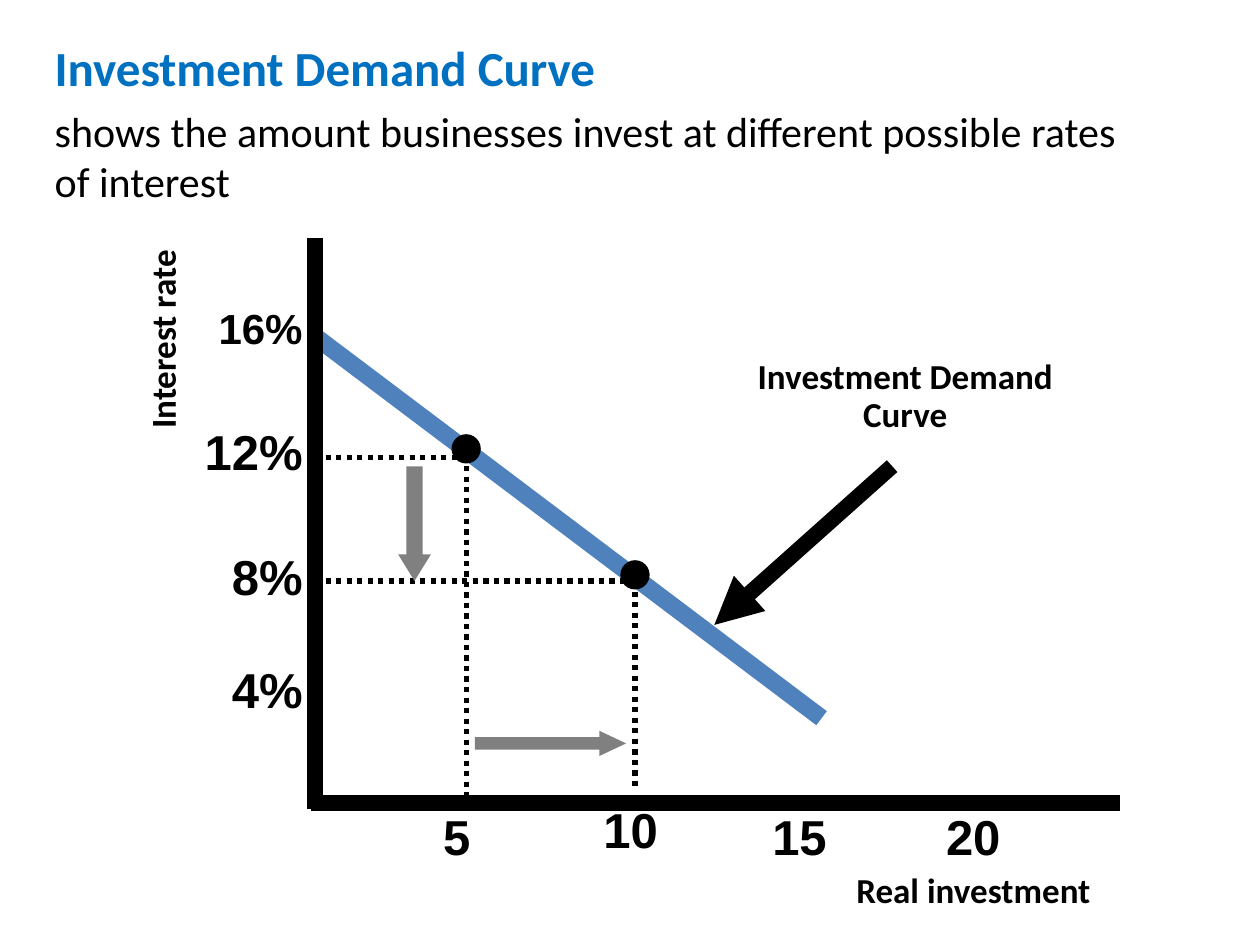
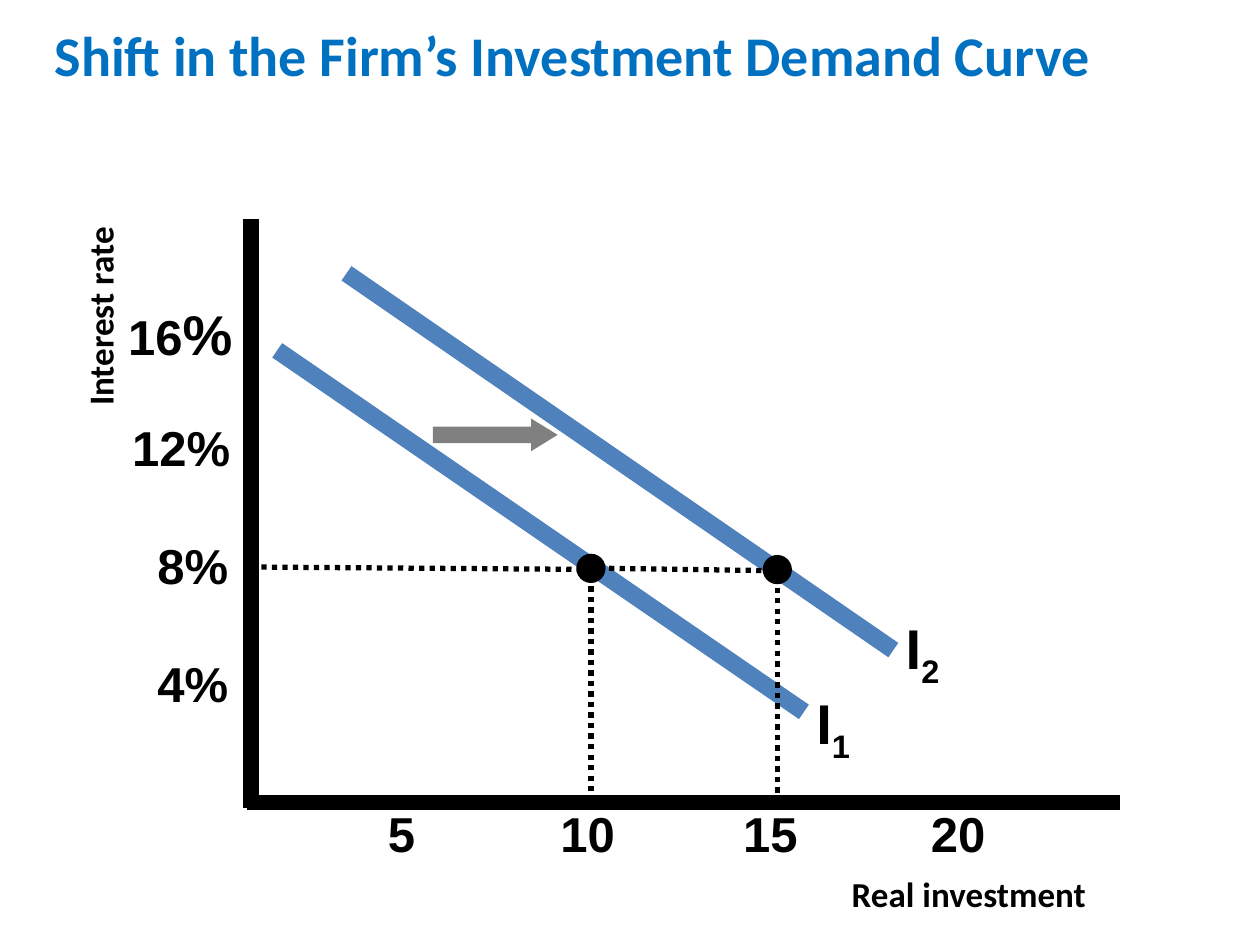
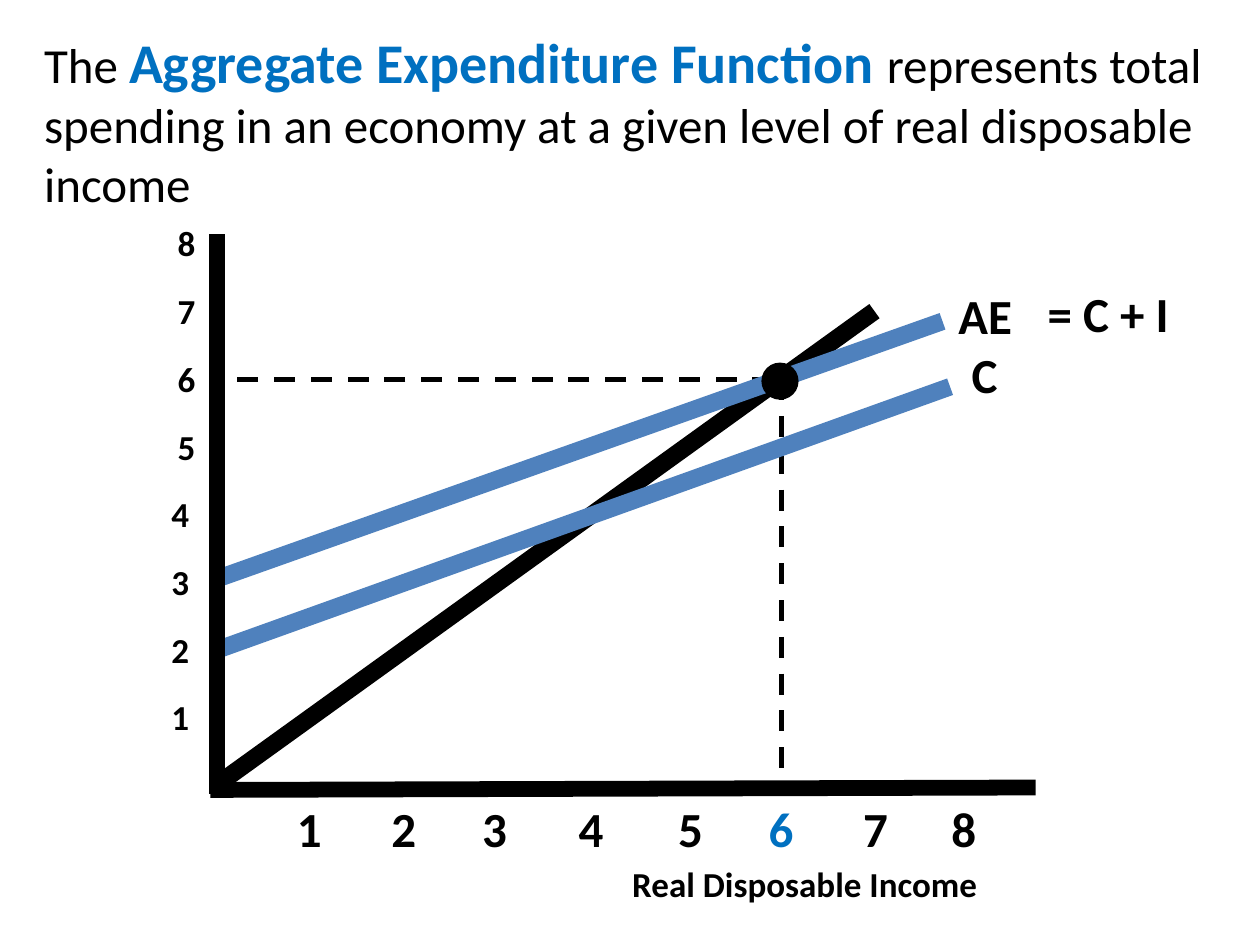
from lxml import etree
from pptx import Presentation
from pptx.dml.color import RGBColor
from pptx.enum.dml import MSO_LINE
from pptx.enum.shapes import MSO_CONNECTOR, MSO_SHAPE
from pptx.enum.text import MSO_ANCHOR, MSO_AUTO_SIZE, PP_ALIGN
from pptx.oxml.ns import qn
from pptx.util import Pt

LEFT, CENTER, RIGHT = PP_ALIGN.LEFT, PP_ALIGN.CENTER, PP_ALIGN.RIGHT
DOTTED, DASHED = MSO_LINE.ROUND_DOT, MSO_LINE.DASH
STRAIGHT = MSO_CONNECTOR.STRAIGHT
ELLIPSE, DOWN_ARROW = MSO_SHAPE.OVAL, MSO_SHAPE.DOWN_ARROW
TOP, NO_AUTOFIT = MSO_ANCHOR.TOP, MSO_AUTO_SIZE.NONE
TITLE_AND_BODY, TITLE_ONLY = 1, 5

BLACK, BLUE, CURVE_BLUE, GRAY = "000000", "0070C0", "4F81BD", "808080"
SANS, NUMBERS = "Calibri", "Arial"


def rgb(color):
    return RGBColor.from_string(color)


class GraphDeck:
    """Holds the shared graph style and the slide being drawn."""

    def __init__(self):
        self.presentation = Presentation()
        self.presentation.slide_width = Pt(720)
        self.presentation.slide_height = Pt(540)
        self.slide = None

    def start_slide(self, layout_index):
        layout = self.presentation.slide_layouts[layout_index]
        self.slide = self.presentation.slides.add_slide(layout)

    def place(self, shape, left, top, width, height):
        shape.left, shape.top = Pt(left), Pt(top)
        shape.width, shape.height = Pt(width), Pt(height)
        frame = shape.text_frame
        frame.word_wrap = True
        frame.auto_size = NO_AUTOFIT
        frame.vertical_anchor = TOP
        return frame

    def add_run(self, paragraph, text, size, color=BLACK, bold=True, font=SANS):
        run = paragraph.add_run()
        run.text = text
        run.font.name, run.font.size = font, Pt(size)
        run.font.bold, run.font.color.rgb = bold, rgb(color)
        return run

    def title(self, text, left, top, width, height):
        frame = self.place(self.slide.shapes.title, left, top, width, height)
        paragraph = frame.paragraphs[0]
        paragraph.alignment, paragraph.line_spacing = LEFT, 0.9
        self.add_run(paragraph, text, 32, BLUE)

    def body(self, paragraphs, left, top, width, height):
        """Fill the body with paragraphs, each a list of (text, size, color, bold)."""
        title = self.slide.shapes.title._element
        title.getparent().remove(title)
        frame = self.place(self.slide.placeholders[1], left, top, width, height)
        for index, runs in enumerate(paragraphs):
            paragraph = frame.add_paragraph() if index else frame.paragraphs[0]
            properties = paragraph._p.get_or_add_pPr()
            properties.set("marL", "0")
            properties.set("indent", "0")
            etree.SubElement(properties, qn("a:buNone"))
            for run in runs:
                self.add_run(paragraph, *run)

    def label(self, text, left, top, width, size=20, align=CENTER, font=SANS,
              color=BLACK, lines=1, rotation=0):
        height = 7.2 + 1.1 * size * lines
        box = self.slide.shapes.add_textbox(0, 0, 0, 0)
        frame = self.place(box, left, top, width, height)
        box.rotation = rotation
        paragraph = frame.paragraphs[0]
        paragraph.alignment, paragraph.line_spacing = align, 0.9
        self.add_run(paragraph, text, size, color, font=font)
        return paragraph

    def curve_name(self, subscript, left, top):
        paragraph = self.label("I", left, top, 50, 32, LEFT, NUMBERS)
        run = self.add_run(paragraph, subscript, 32, font=NUMBERS)
        run._r.get_or_add_rPr().set("baseline", "-25000")

    def line(self, start, end, width=9, color=BLACK, dash=None, arrow=False):
        ends = [Pt(value) for value in (*start, *end)]
        connector = self.slide.shapes.add_connector(STRAIGHT, *ends)
        connector.line.width = Pt(width)
        connector.line.color.rgb = rgb(color)
        if dash is not None:
            connector.line.dash_style = dash
        properties = connector._element.spPr
        if arrow:
            outline = properties.find(qn("a:ln"))
            etree.SubElement(outline, qn("a:tailEnd"), type="triangle")
        etree.SubElement(properties, qn("a:effectLst"))

    def guide(self, start, end, dash=DOTTED):
        self.line(start, end, 3, dash=dash)

    def curve(self, start, end, color=CURVE_BLUE):
        self.line(start, end, 10, color)

    def filled_shape(self, kind, left, top, width, height, color):
        shape = self.slide.shapes.add_shape(
            kind, Pt(left), Pt(top), Pt(width), Pt(height))
        shape.shadow.inherit = False
        shape.fill.solid()
        shape.fill.fore_color.rgb = rgb(color)
        return shape

    def point(self, x, y, diameter=16):
        radius = diameter / 2
        dot = self.filled_shape(ELLIPSE, x - radius, y - radius, diameter, diameter, BLACK)
        dot.line.color.rgb = rgb(BLACK)
        dot.line.width = Pt(0.75)

    def shift_arrow(self, center_x, center_y, breadth, length, head, rotation=0):
        """Draw a gray arrow; it points down, or right when rotated by 270."""
        arrow = self.filled_shape(DOWN_ARROW, center_x - breadth / 2,
                                  center_y - length / 2, breadth, length, GRAY)
        arrow.adjustments[0], arrow.adjustments[1] = 0.5, head
        arrow.rotation = rotation
        arrow.line.fill.background()


def demand_curve(deck):
    deck.start_slide(TITLE_AND_BODY)
    deck.body([
        [("Investment Demand Curve", 28, BLUE, True)],
        [("shows the amount businesses invest at different possible rates "
          "of interest", 24, BLACK, False)],
    ], 24, 18, 636, 105)
    axis_x, first_x, second_x = 180, 266.4, 362.9
    deck.guide((axis_x, 261.4), (263.5, 261.4))
    deck.guide((first_x, 266.4), (first_x, 457))
    deck.guide((second_x, 332), (second_x, 452))
    deck.guide((axis_x, 332), (second_x, 332))
    deck.line((178, 459), (640, 459))
    for text, top, size in (("16%", 172.8, 24), ("12%", 241.2, 28),
                            ("8%", 312.5, 28), ("4%", 377.3, 28)):
        deck.label(text, axis_x - 81, top, 81, size, RIGHT, NUMBERS)
    for text, left, top in (("5", 246.2, 461), ("10", 337.7, 457.2),
                            ("15", 434.2, 461), ("20", 533.5, 461)):
        deck.label(text, left, top, 82, 28, LEFT, NUMBERS)
    deck.label("Real investment", 476, 495.4, 160.5)
    deck.curve((axis_x, 192.2), (469.5, 410.4))
    deck.label("Investment Demand Curve", 408.2, 201.6, 218.2, lines=2)
    deck.line((509.8, 266.4), (408.2, 357.1), arrow=True)
    deck.point(first_x, 256.5)
    deck.point(second_x, 328.5)
    deck.label("Interest rate", 28, 179.3, 132.5, rotation=270)
    deck.line((axis_x, 136), (axis_x, 462.2))
    deck.shift_arrow(236.9, 299.2, 18.7, 65.5, 0.81)
    deck.shift_arrow(314.6, 424.8, 14.4, 86.4, 1.06, 270)


def curve_shift(deck):
    deck.start_slide(TITLE_ONLY)
    deck.title("Shift in the Firm’s Investment Demand Curve", 24, 12.2, 624, 42.5)
    axis_x, first_x, second_x = 143.3, 337.7, 444.2
    deck.guide((axis_x, 324), (first_x, 325.4))
    deck.guide((first_x, 329), (first_x, 458.6))
    deck.line((141.1, 458.6), (640, 458.6))
    percent_label = deck.label("16", 66.2, 172.1, 82, 28, LEFT, NUMBERS)
    deck.add_run(percent_label, "%", 32, font=NUMBERS)
    for index, (text, left) in enumerate((("12%", 68.4), ("8%", 82.8), ("4%", 82.8))):
        deck.label(text, left, 239 + 67.3 * index, 82, 28, LEFT, NUMBERS)
    for text, left in (("5", 214.6), ("10", 313.2), ("15", 417.6), ("20", 524.9)):
        deck.label(text, left, 459.2, 89, 28, LEFT, NUMBERS)
    deck.curve((158.4, 200.2), (459.4, 406.8))
    deck.label("Interest rate", -10, 166.3, 137.5, rotation=270)
    deck.curve((198, 156.2), (510.5, 371.5))
    deck.point(first_x, 324.8)
    deck.guide((342, 324.7), (447.1, 326.2))
    deck.guide((second_x, 329.8), (second_x, 460))
    deck.point(second_x, 325.5)
    deck.curve_name("1", 459.4, 390.2)
    deck.curve_name("2", 510.5, 347.8)
    deck.label("Real investment", 444.2, 497.5, 218.9)
    deck.shift_arrow(283, 248.5, 18.7, 71.3, 0.81, 270)
    deck.line((axis_x, 125.3), (axis_x, 461.5))


def aggregate_expenditure(deck):
    deck.start_slide(TITLE_AND_BODY)
    axis_x, equilibrium_x, equilibrium_y = 123.8, 446.4, 216.7
    deck.curve((axis_x, 448.6), (499.7, 177.8), BLACK)
    deck.body([[
        ("The ", 28, BLACK, False),
        ("Aggregate Expenditure Function ", 32, BLUE, True),
        ("represents total spending in an economy at a given level of real "
         "disposable income", 28, BLACK, False),
    ]], 18, 12.2, 702, 113.8)
    deck.label("Real Disposable Income", 354.2, 491.8, 252, align=LEFT)
    for number in range(1, 9):
        right = 115.2 if number < 5 else 118.8
        deck.label(str(number), right - 42, 126 + 38.7 * (8 - number), 42, align=RIGHT)
    income_centers = (176.8, 230.8, 282.6, 337.7, 394.6, equilibrium_x, 500.4, 550.8)
    for number, center in enumerate(income_centers, start=1):
        deck.label(str(number), center - 25, 456.5, 50, 28,
                   color=BLUE if number == 6 else BLACK)
    for text, left, top, width in (("C", 538.6, 197.3, 48.2), ("AE", 534.2, 163.4, 57.6),
                                   ("= C + I", 572.4, 162, 121.7)):
        deck.label(text, left, top, width, 28)
    deck.guide((442, equilibrium_y), (133.9, equilibrium_y), DASHED)
    deck.guide((equilibrium_x, equilibrium_y), (equilibrium_x, 453.6), DASHED)
    deck.curve((axis_x, 371.5), (542.9, 221))
    deck.curve((126.7, 329.8), (538.6, 183.6))
    deck.point(445.7, 217.8, 20.5)
    deck.line((axis_x, 133.9), (axis_x, 453.6))
    deck.line((120.2, 451.4), (591.8, 450))


def main():
    deck = GraphDeck()
    demand_curve(deck)
    curve_shift(deck)
    aggregate_expenditure(deck)
    deck.presentation.save("out.pptx")


if __name__ == "__main__":
    main()
